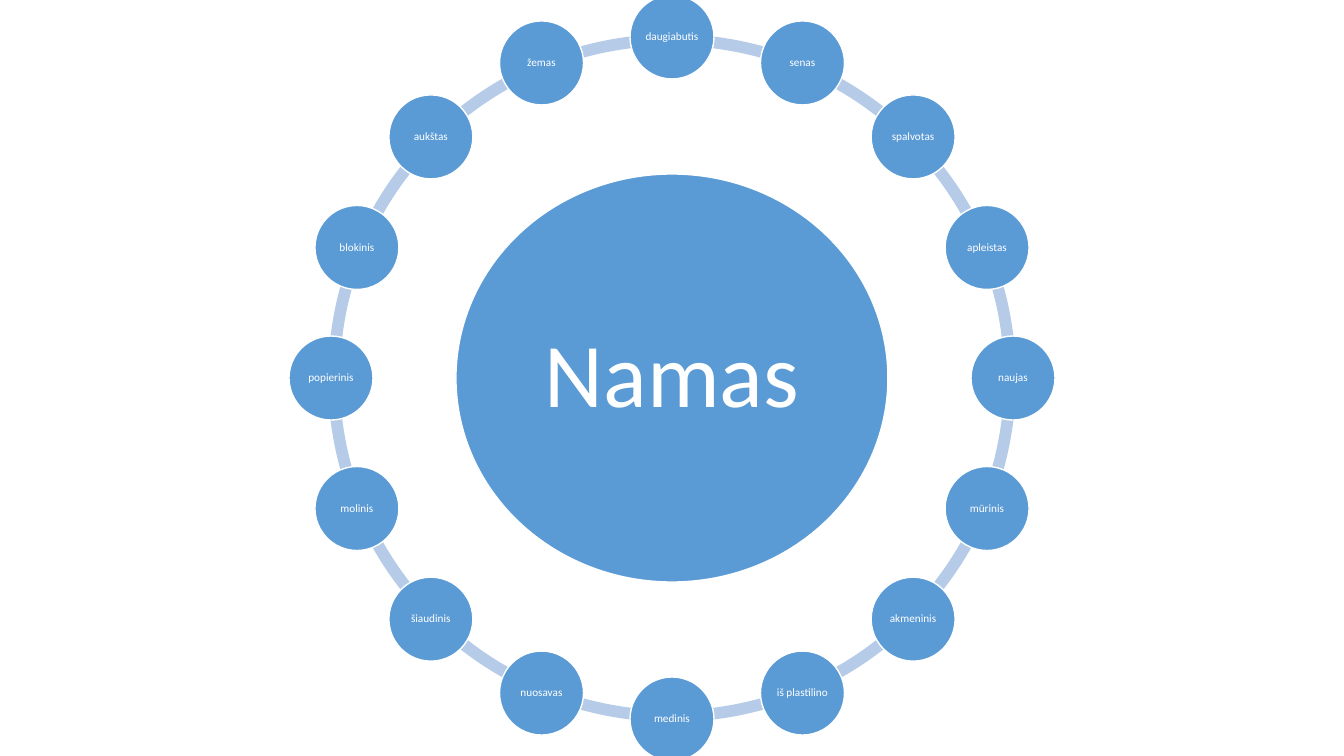
import math
import pptx
import pptx.dml.color
import pptx.enum.shapes
import pptx.enum.text
import pptx.util

WIDE, HIGH = 1344, 756
SCALE = 12192000 / WIDE
THEME = {
    "font": "Calibri",
    "blue": "5B9BD5",
    "pale": "B5CBE7",
    "white": "FFFFFF",
    "hub": 65,
    "node": 8,
}
KIND = pptx.enum.shapes.MSO_SHAPE
WORDS = [
    "daugiabutis", "senas", "spalvotas", "apleistas",
    "naujas", "mūrinis", "akmeninis", "iš plastilino",
    "medinis", "nuosavas", "šiaudinis", "molinis",
    "popierinis", "blokinis", "aukštas", "žemas",
]


def shape(kind, mid, size, fill):
    """Add a filled shape centred on mid, all in px."""
    box = [mid[0] - size[0] / 2, mid[1] - size[1] / 2, *size]
    item = slide.shapes.add_shape(kind, *[round(v * SCALE) for v in box])
    item.shadow.inherit = False
    item.fill.solid()
    item.fill.fore_color.rgb = pptx.dml.color.RGBColor.from_string(THEME[fill])
    item.line.fill.background()
    return item


def label(text, mid, size, font, inset):
    """Add a white-edged oval that holds centred text."""
    white = pptx.dml.color.RGBColor.from_string(THEME["white"])
    oval = shape(KIND.OVAL, mid, size, "blue")
    oval.line.color.rgb = white
    oval.line.width = pptx.util.Pt(1)
    frame = oval.text_frame
    frame.word_wrap = True
    frame.vertical_anchor = pptx.enum.text.MSO_ANCHOR.MIDDLE
    pad = round(inset * SCALE)
    frame.margin_left = frame.margin_right = pad
    frame.margin_top = frame.margin_bottom = pad
    para = frame.paragraphs[0]
    para.alignment = pptx.enum.text.PP_ALIGN.CENTER
    para.line_spacing = 0.9
    run = para.add_run()
    run.text = text
    run.font.name = THEME["font"]
    run.font.size = pptx.util.Pt(THEME[font])
    run.font.color.rgb = white


deck = pptx.Presentation()
deck.slide_width = round(WIDE * SCALE)
deck.slide_height = round(HIGH * SCALE)
slide = deck.slides.add_slide(deck.slide_layouts[6])

centre = (WIDE // 2, HIGH // 2)
orbit = 341
# A full turn is 216 in block arc adjustment units.
TURN = 216
step = TURN / len(WORDS)

for spot in range(len(WORDS)):
    arc = shape(KIND.BLOCK_ARC, centre, (688, 688), "pale")
    arc.adjustments[0] = spot * step
    arc.adjustments[1] = (spot + 1) * step % TURN
    arc.adjustments[2] = 0.017

label("Namas", centre, (432, 408), font="hub", inset=9)

for spot, word in enumerate(WORDS):
    angle = math.tau * spot / len(WORDS)
    mid = (centre[0] + orbit * math.sin(angle),
           centre[1] - orbit * math.cos(angle))
    label(word, mid, (84, 84), font="node", inset=1)

deck.save("out.pptx")
